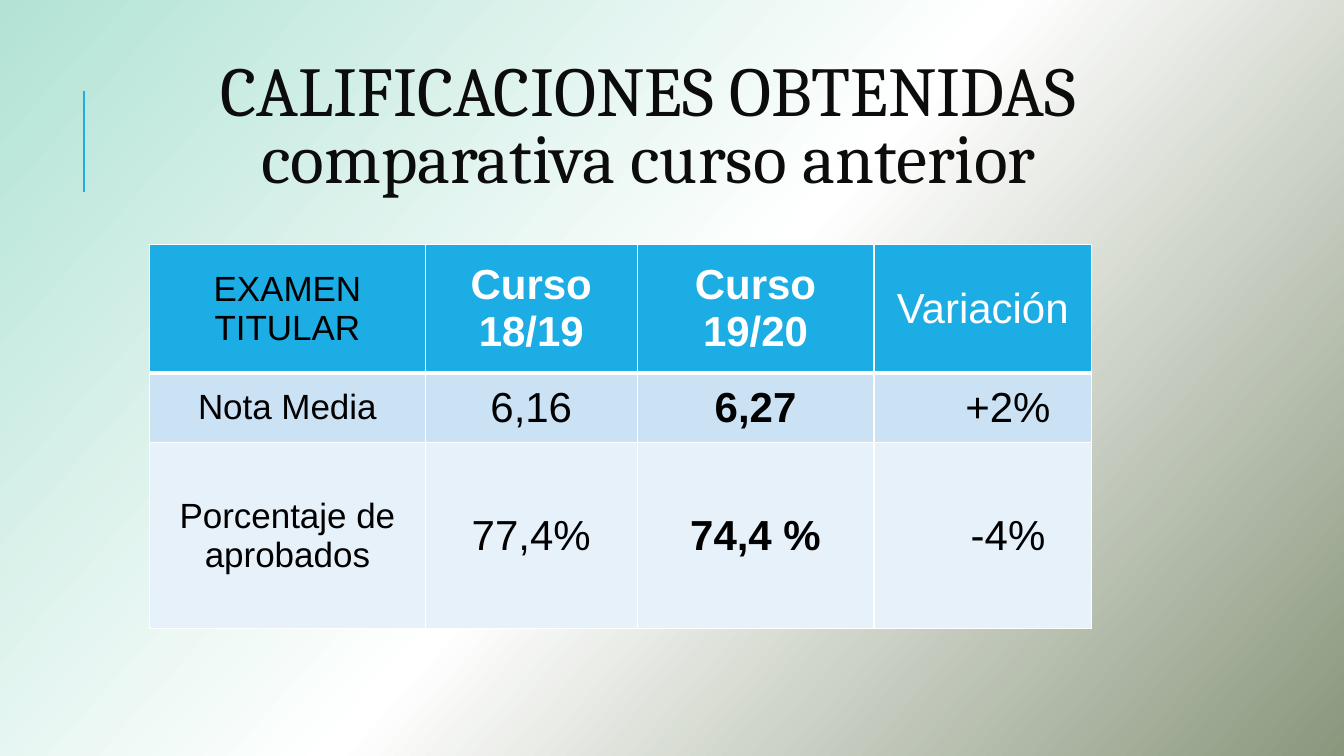
import copy
from dataclasses import dataclass

import pptx
import pptx.dml.color
import pptx.enum.shapes
import pptx.enum.text
import pptx.oxml
import pptx.oxml.ns
import pptx.util
from pptx.util import Pt

ALIGN = pptx.enum.text.PP_ALIGN
ANCHOR = pptx.enum.text.MSO_ANCHOR


@dataclass(frozen=True)
class Theme:
    accent: str = "1CADE4"
    title: str = "0C0C0C"
    dark: str = "000000"
    light: str = "FFFFFF"
    bands: tuple = ("CBE2F5", "E7F1FA")
    gradient: tuple = ((0, "B2E3D5"), (0.5, "FFFFFF"), (1, "8A977D"))
    title_font: str = "Cambria"
    body_font: str = "Arial"
    title_size: int = 50
    label_size: int = 25
    value_size: int = 30


THEME = Theme()

COLUMN_WIDTHS = (197.3, 151.2, 169.2, 155.5)
ROW_HEIGHTS = (91.4, 49.7, 133.2)
GRADES = (
    ("EXAMEN TITULAR", "Curso 18/19", "Curso 19/20", "Variación"),
    ("Nota Media", "6,16", "6,27", "+2%"),
    ("Porcentaje de aprobados", "77,4%", "74,4 %", "-4%"),
)


def rgb(color):
    return pptx.dml.color.RGBColor.from_string(color)


def add_run(p, text, font, size, color, bold=False):
    r = p.add_run()
    r.text = text
    r.font.name = font
    r.font.size = Pt(size)
    r.font.bold = bold
    r.font.color.rgb = rgb(color)


def set_background(s):
    fill = s.background.fill
    fill.gradient()
    fill.gradient_angle = 318
    # The default gradient has two stops; add the middle one
    first = next(s.element.iter(pptx.oxml.ns.qn("a:gs")))
    first.addnext(copy.deepcopy(first))
    for stop, (position, color) in zip(fill.gradient_stops, THEME.gradient):
        stop.position = position
        stop.color.rgb = rgb(color)


def add_accent_line(s, x, top, bottom):
    sp = s.shapes.add_connector(pptx.enum.shapes.MSO_CONNECTOR.STRAIGHT,
                                Pt(x), Pt(bottom), Pt(x), Pt(top))
    sp.line.color.rgb = rgb(THEME.accent)
    sp.line.width = Pt(1.5)
    sp.element.spPr.append(pptx.oxml.parse_xml(
        f'<a:effectLst {pptx.oxml.ns.nsdecls("a")}/>'))


def set_title(s, lines):
    sp = s.shapes.title
    sp.left, sp.top, sp.width, sp.height = Pt(80.6), Pt(33.8), Pt(765.4), Pt(118.1)
    tf = sp.text_frame
    tf.word_wrap = True
    tf.auto_size = pptx.enum.text.MSO_AUTO_SIZE.NONE
    tf.vertical_anchor = ANCHOR.MIDDLE
    for i, line in enumerate(lines):
        p = tf.add_paragraph() if i else tf.paragraphs[0]
        p.alignment = ALIGN.CENTER
        p.line_spacing = 0.8
        p.space_before = Pt(0)
        add_run(p, line, THEME.title_font, THEME.title_size, THEME.title)


def set_borders(cell, top, bottom):
    tc_pr = cell._tc.get_or_add_tcPr()
    widths = {"L": 1, "R": 1, "T": top, "B": bottom}
    for i, (side, width) in enumerate(widths.items()):
        tc_pr.insert(i, pptx.oxml.parse_xml(
            f'<a:ln{side} {pptx.oxml.ns.nsdecls("a")} w="{Pt(width)}"><a:solidFill>'
            f'<a:srgbClr val="{THEME.light}"/></a:solidFill></a:ln{side}>'))


def fill_cell(cell, text, row, col):
    header, label = row == 0, col == 0
    cell.fill.solid()
    cell.fill.fore_color.rgb = rgb(THEME.accent if header else THEME.bands[row - 1])
    cell.vertical_anchor = ANCHOR.MIDDLE
    set_borders(cell, top=3 if row == 1 else 1, bottom=3 if header else 1)
    p = cell.text_frame.paragraphs[0]
    p.alignment = ALIGN.CENTER
    # Variation figures are indented from the left
    if col == 3 and not header:
        p._p.get_or_add_pPr().set("marL", str(Pt(36)))
    add_run(p, text, THEME.body_font,
            THEME.label_size if label else THEME.value_size,
            THEME.light if header and not label else THEME.dark,
            bold=col == 2 or (header and col == 1))


def add_grades_table(s, left, top):
    sp = s.shapes.add_table(len(GRADES), len(GRADES[0]), Pt(left), Pt(top),
                            Pt(sum(COLUMN_WIDTHS)), Pt(sum(ROW_HEIGHTS)))
    table = sp.table
    for column, width in zip(table.columns, COLUMN_WIDTHS):
        column.width = Pt(width)
    for row, height in zip(table.rows, ROW_HEIGHTS):
        row.height = Pt(height)
    for i, texts in enumerate(GRADES):
        for j, text in enumerate(texts):
            fill_cell(table.cell(i, j), text, i, j)


def main():
    prs = pptx.Presentation()
    prs.slide_width, prs.slide_height = Pt(960), Pt(540)
    s = prs.slides.add_slide(prs.slide_layouts[5])

    # Backdrop and heading
    set_background(s)
    add_accent_line(s, 60, 65, 137)
    set_title(s, ("CALIFICACIONES OBTENIDAS", "comparativa curso anterior"))

    # Results by course
    add_grades_table(s, 106.6, 174.8)

    prs.save("out.pptx")


if __name__ == "__main__":
    main()
